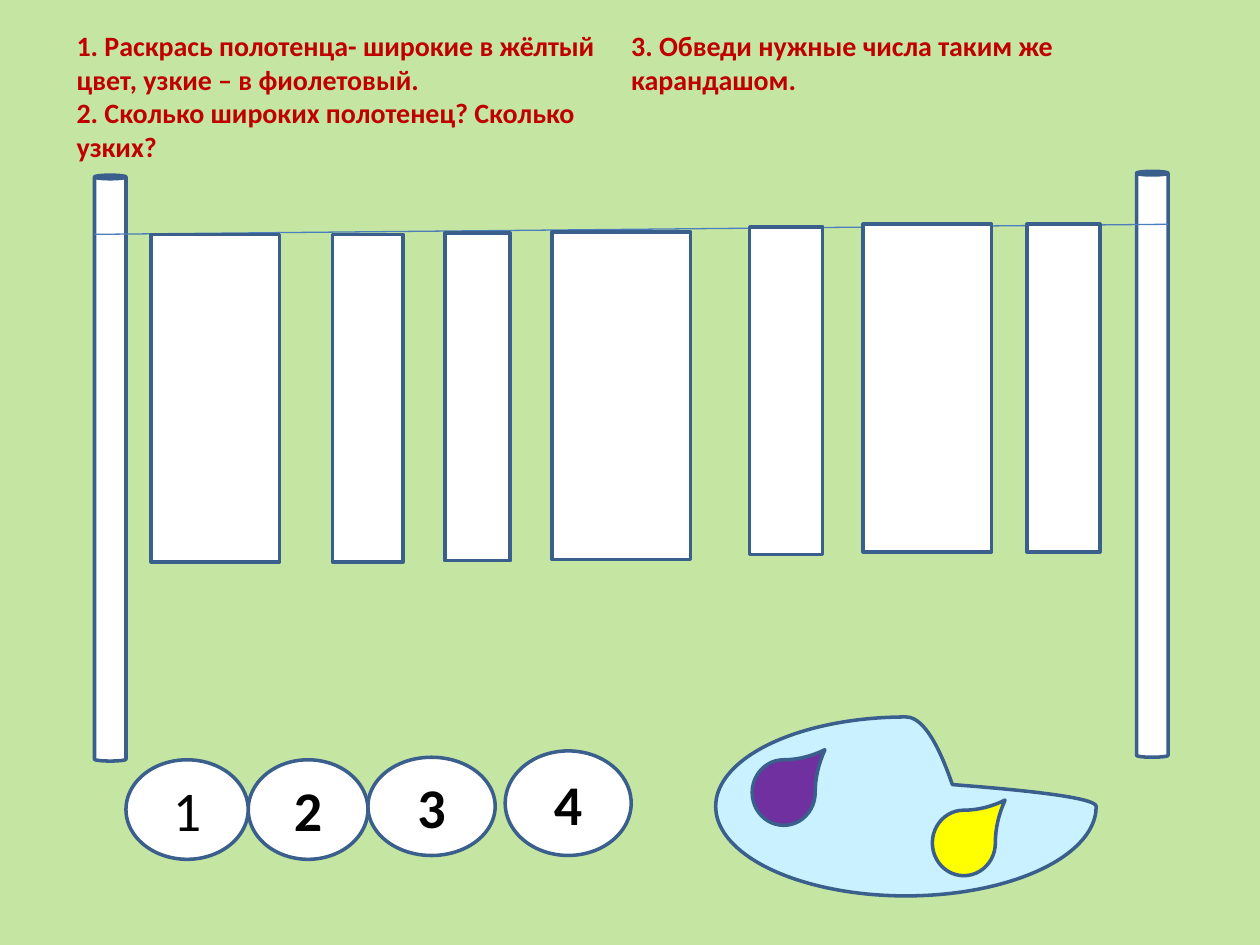
import pptx
import pptx.util
import pptx.dml.color
import pptx.enum.shapes
import pptx.enum.text
import pptx.oxml
import pptx.oxml.ns

Inches = pptx.util.Inches
Pt = pptx.util.Pt
SHAPE = pptx.enum.shapes.MSO_SHAPE
OUTLINE = "3A5F8C"
WHITE = "FFFFFF"

INSTRUCTIONS = [
    "1. Раскрась полотенца- широкие в жёлтый цвет, узкие – в фиолетовый.",
    "2. Сколько широких полотенец? Сколько узких?",
    "3. Обведи нужные числа таким же карандашом.",
]


def color(hex_value):
    return pptx.dml.color.RGBColor.from_string(hex_value)


def set_attributes(target, values):
    for name, value in values.items():
        setattr(target, name, value)


def add_outlined_shape(slide, kind, box, fill=WHITE, adjustment=None):
    shape = slide.shapes.add_shape(kind, *map(Inches, box))
    shape.shadow.inherit = False
    shape.fill.solid()
    shape.fill.fore_color.rgb = color(fill)
    shape.line.color.rgb = color(OUTLINE)
    shape.line.width = Pt(2)
    if adjustment is not None:
        shape.adjustments[0] = adjustment
    return shape


def format_run(run, size, hex_value, bold):
    set_attributes(run.font, {"name": "Calibri", "size": Pt(size), "bold": bold})
    run.font.color.rgb = color(hex_value)


def add_instructions(slide, box):
    """Place the numbered tasks in a two-column text box."""
    frame = slide.shapes.add_textbox(*map(Inches, box)).text_frame
    set_attributes(frame, {
        "word_wrap": True,
        "auto_size": pptx.enum.text.MSO_AUTO_SIZE.NONE,
        "vertical_anchor": pptx.enum.text.MSO_ANCHOR.MIDDLE,
    })
    frame._txBody.bodyPr.set("numCol", "2")
    paragraph = frame.paragraphs[0]
    for index, task in enumerate(INSTRUCTIONS):
        if index:
            paragraph.add_line_break()
        run = paragraph.add_run()
        run.text = task
        format_run(run, 16, "C00000", True)


def add_number(slide, box, number):
    shape = add_outlined_shape(slide, SHAPE.OVAL, box)
    frame = shape.text_frame
    frame.vertical_anchor = pptx.enum.text.MSO_ANCHOR.MIDDLE
    paragraph = frame.paragraphs[0]
    paragraph.alignment = pptx.enum.text.PP_ALIGN.CENTER
    run = paragraph.add_run()
    run.text = str(number)
    format_run(run, 32, "000000", number > 1)


def add_numbers(slide, left, top):
    ovals = [(0, 0.07, 0.97, 0.79), (0.97, 0.07, 0.95, 0.79),
             (1.92, 0.05, 1.01, 0.78), (3.01, 0, 1, 0.83)]
    for number, (x, y, width, height) in reversed(list(enumerate(ovals, 1))):
        add_number(slide, (left + x, top + y, width, height), number)


def add_clothesline(slide, box):
    """Place two poles, the rope between them and the hanging towels."""
    left, top, width, height = box
    pole_width, pole_height, towel_height = 0.25, 4.65, 2.6
    right = left + width
    for x, y in [(left, top + height - pole_height), (right - pole_width, top)]:
        add_outlined_shape(slide, SHAPE.CAN, (x, y, pole_width, pole_height),
                           adjustment=0.115)

    rope = slide.shapes.add_connector(
        pptx.enum.shapes.MSO_CONNECTOR.STRAIGHT,
        Inches(left), Inches(top + 0.5), Inches(right), Inches(top + 0.42))
    rope.line.color.rgb = color("4B7EBC")
    rope.line.width = Pt(0.75)
    rope._element.spPr.append(
        pptx.oxml.parse_xml("<a:effectLst %s/>" % pptx.oxml.ns.nsdecls("a")))

    towels = [(0.45, 0.5, 1.02), (1.89, 0.5, 0.56), (2.78, 0.49, 0.52),
              (3.63, 0.48, 1.1), (5.2, 0.44, 0.58), (6.1, 0.42, 1.02),
              (7.4, 0.42, 0.58)]
    for x, y, towel_width in towels:
        add_outlined_shape(slide, SHAPE.RECTANGLE,
                           (left + x, top + y, towel_width, towel_height))


def add_palette(slide, box):
    left, top, width, height = box
    add_outlined_shape(slide, SHAPE.TEAR, box, "C9F1FF", 0.244)
    for x, y, paint in [(1.72, 0.74, "FFFF00"), (0.29, 0.34, "7030A0")]:
        add_outlined_shape(slide, SHAPE.TEAR, (left + x, top + y, 0.5, 0.52),
                           paint, 1.308)


def main():
    presentation = pptx.Presentation()
    set_attributes(presentation, {"slide_width": Inches(10),
                                  "slide_height": Inches(7.5)})
    slide = presentation.slides.add_slide(presentation.slide_layouts[6])
    slide.background.fill.solid()
    slide.background.fill.fore_color.rgb = color("C5E6A2")

    add_numbers(slide, 1, 5.96)
    add_instructions(slide, (0.51, 0.13, 9, 1.26))
    add_clothesline(slide, (0.75, 1.36, 8.52, 4.68))
    add_palette(slide, (5.68, 5.69, 3.02, 1.42))
    presentation.save("out.pptx")


if __name__ == "__main__":
    main()
